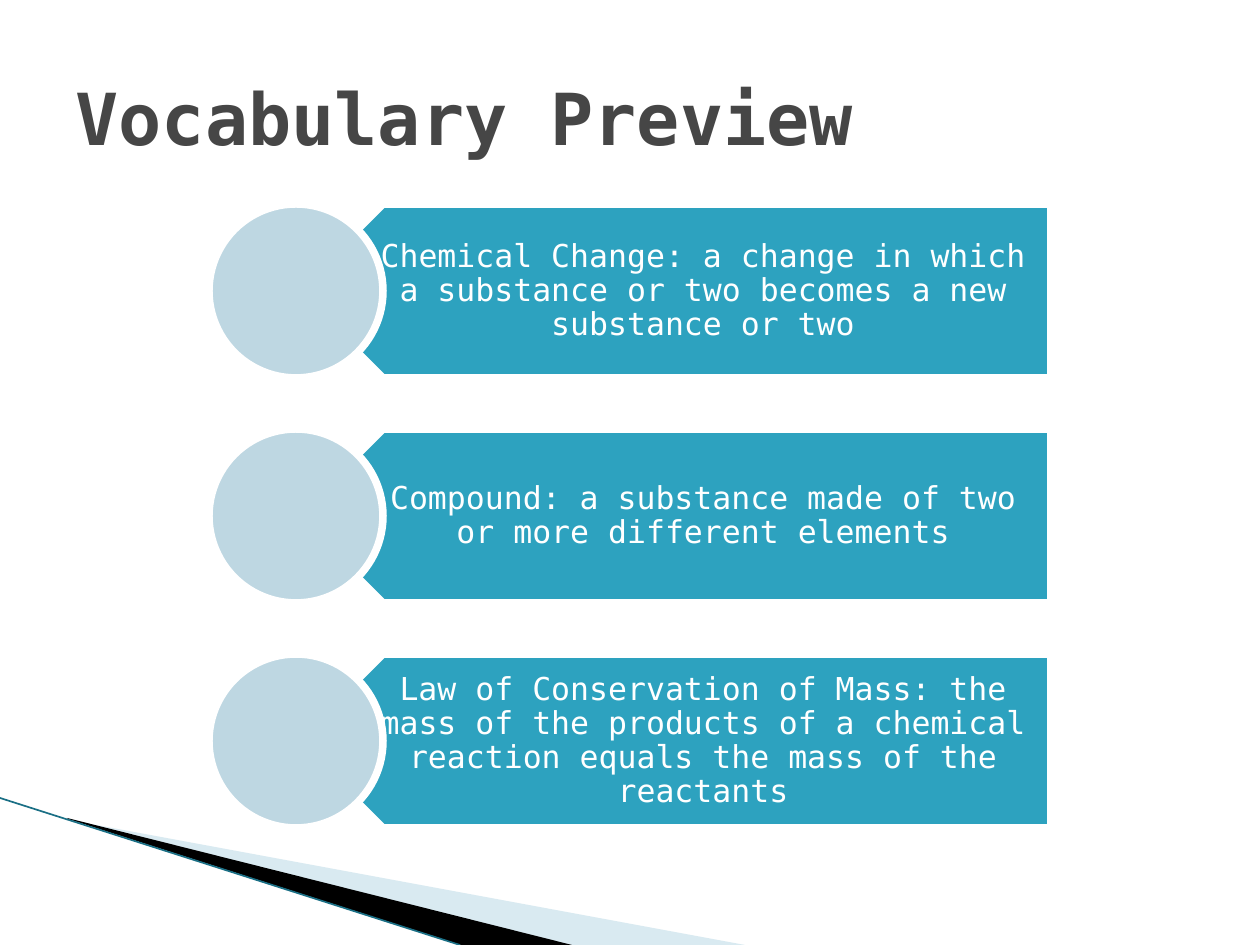
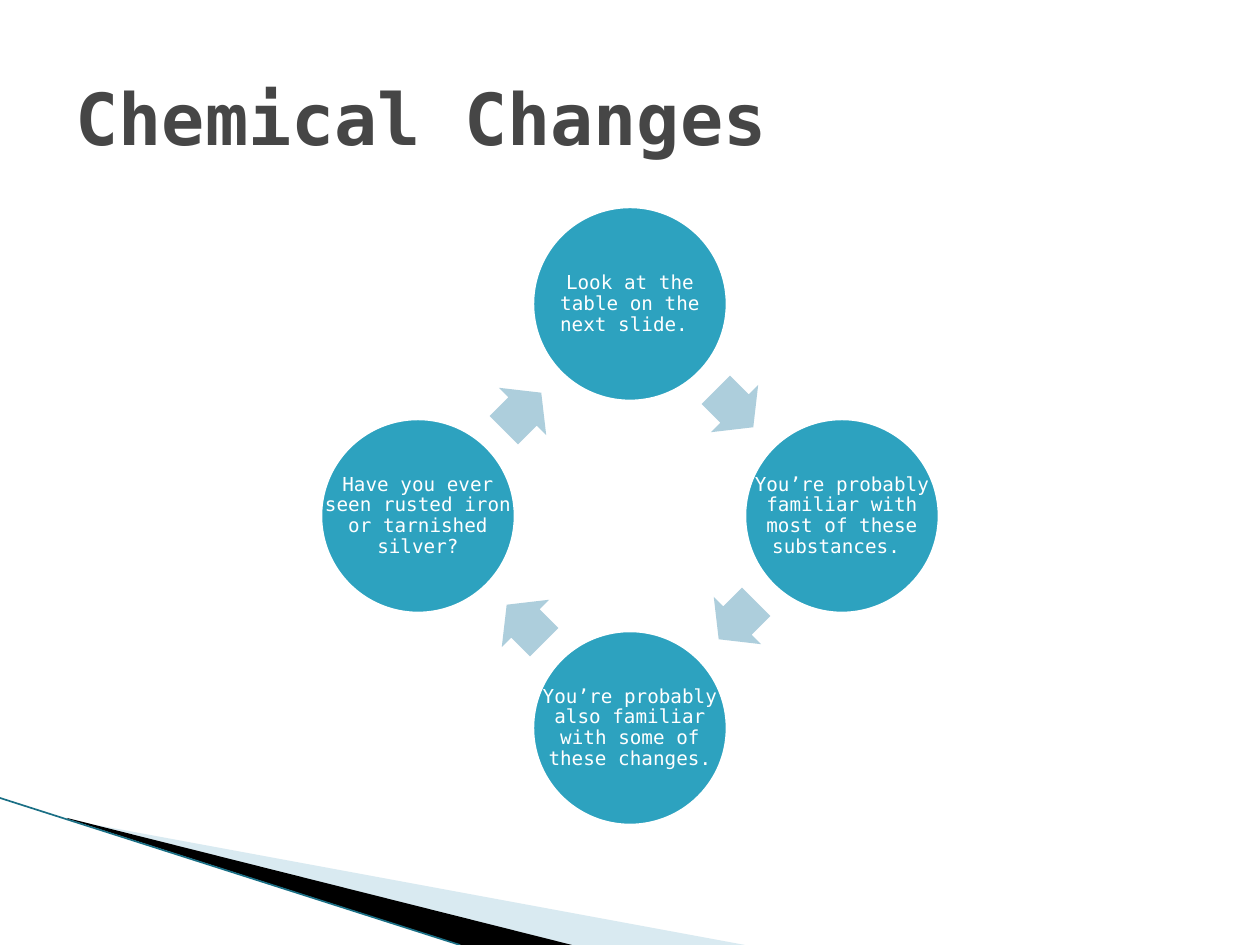
from math import cos, radians, sin

from lxml.etree import SubElement
from pptx import Presentation
from pptx.dml.color import RGBColor
from pptx.enum.shapes import MSO_CONNECTOR, MSO_SHAPE
from pptx.enum.text import MSO_ANCHOR, MSO_AUTO_SIZE, PP_ALIGN
from pptx.oxml.ns import qn
from pptx.util import Pt

VOCABULARY_TITLE = "Vocabulary Preview"
DEFINITIONS = [
    "Chemical Change: a change in which a substance or two becomes a new substance or two",
    "Compound: a substance made of two or more different elements",
    "Law of Conservation of Mass: the mass of the products of a chemical reaction "
    "equals the mass of the reactants",
]
CYCLE_TITLE = "Chemical Changes"
CYCLE_STEPS = [
    "Look at the table on the next slide. ",
    "You’re probably familiar with most of these substances. ",
    "You’re probably also familiar with some of these changes.",
    "Have you ever seen rusted iron or tarnished silver?",
]

FONT = "DejaVu Sans Mono"
COLORS = {
    "title": "464646",
    "accent": "2DA2BF",
    "disc": "BED7E2",
    "arrow": "ADCEDC",
    "white": "FFFFFF",
    "light_band": "A0CBDC",
    "dark_band": "000000",
    "band_edge": "1A6F85",
}
OUTLINE = 4.33

PX = 914400 / 126
SLIDE_SIZE = (1260, 945)
TITLE_BOX = (63, 38, 1134, 158)
BANDS = [  # colour, opacity in percent, corners
    ("light_band", 40, [(69, 820), (745, 945), (571, 945), (69, 819)]),
    ("dark_band", 100, [(67, 818), (572, 945), (461, 945), (68, 819)]),
]
BAND_EDGE = (0, 798, 460, 945)

PLATE_LEFT, PLATE_TOP, PLATE_WIDTH, PLATE_HEIGHT = 296, 204, 755, 174
PLATE_PITCH = 225
PLATE_INSETS = (77, 9, 18, 9)

CYCLE_CENTER = (630, 516)
CYCLE_RADIUS = 212
STEP_DIAMETER = 199
STEP_INSETS = (2, 2, 2, 2)
ARROW_SIZE = (53, 67)
ARROW_SETBACK = 2


def emu(*lengths):
    return [round(length * PX) for length in lengths]


def rgb(name):
    return RGBColor.from_string(COLORS[name])


def fill_shape(shape, color, outlined=False):
    shape.shadow.inherit = False
    shape.fill.solid()
    shape.fill.fore_color.rgb = rgb(color)
    if outlined:
        shape.line.color.rgb = rgb("white")
        shape.line.width = Pt(OUTLINE)
    else:
        shape.line.fill.background()


def add_filled(slide, kind, box, color, outlined=False):
    shape = slide.shapes.add_shape(kind, *emu(*box))
    fill_shape(shape, color, outlined)
    return shape


def write_text(frame, text, size, color, alignment, bold=False):
    frame.word_wrap = True
    frame.auto_size = MSO_AUTO_SIZE.NONE
    frame.vertical_anchor = MSO_ANCHOR.MIDDLE
    paragraph = frame.paragraphs[0]
    paragraph.alignment = alignment
    run = paragraph.add_run()
    run.text = text
    run.font.name = FONT
    run.font.size = Pt(size)
    run.font.bold = bold
    run.font.color.rgb = rgb(color)
    return paragraph


def add_label(slide, box, insets, text, size):
    """Lay white centred text over a shape, free of the shape's own text area."""
    frame = slide.shapes.add_textbox(*emu(*box)).text_frame
    (frame.margin_left, frame.margin_top,
     frame.margin_right, frame.margin_bottom) = emu(*insets)
    paragraph = write_text(frame, text, size, "white", PP_ALIGN.CENTER)
    paragraph.line_spacing = 0.9


def add_titled_slide(presentation, layout, title):
    slide = presentation.slides.add_slide(layout)
    write_text(slide.shapes.title.text_frame, title, 41, "title", PP_ALIGN.LEFT, bold=True)
    return slide


def move_bands_to_layout(slide, layout):
    """Draw the corner bands with the slide's tools, then hand them to the layout."""
    bands = []
    for color, opacity, corners in BANDS:
        builder = slide.shapes.build_freeform(*corners[0], scale=PX)
        builder.add_line_segments(corners[1:], close=True)
        band = builder.convert_to_shape()
        fill_shape(band, color)
        if opacity < 100:
            color_element = band.element.spPr.find(qn("a:solidFill"))[0]
            SubElement(color_element, qn("a:alpha"), val=str(opacity * 1000))
        bands.append(band)
    edge = slide.shapes.add_connector(MSO_CONNECTOR.STRAIGHT, *emu(*BAND_EDGE))
    edge.line.color.rgb = rgb("band_edge")
    edge.line.width = Pt(0.95)
    SubElement(edge.element.spPr, qn("a:effectLst"))
    for shape in [*bands, edge]:
        layout.shapes.element.append(shape.element)


def draw_definitions(slide):
    for index, definition in enumerate(DEFINITIONS):
        top = PLATE_TOP + index * PLATE_PITCH
        box = (PLATE_LEFT, top, PLATE_WIDTH, PLATE_HEIGHT)
        plate = add_filled(slide, MSO_SHAPE.PENTAGON, box, "accent", outlined=True)
        plate.rotation = 180
        add_label(slide, box, PLATE_INSETS, definition, 18)
        disc = (PLATE_LEFT - PLATE_HEIGHT / 2, top, PLATE_HEIGHT, PLATE_HEIGHT)
        add_filled(slide, MSO_SHAPE.OVAL, disc, "disc", outlined=True)


def centered_box(x, y, width, height):
    return (x - width / 2, y - height / 2, width, height)


def cycle_point(angle, radius):
    """Point on the cycle, with the angle in degrees clockwise from the top."""
    x, y = CYCLE_CENTER
    return x + radius * sin(radians(angle)), y - radius * cos(radians(angle))


def draw_cycle(slide):
    turn = 360 / len(CYCLE_STEPS)
    for index, step in enumerate(CYCLE_STEPS):
        angle = index * turn
        box = centered_box(*cycle_point(angle, CYCLE_RADIUS), STEP_DIAMETER, STEP_DIAMETER)
        add_filled(slide, MSO_SHAPE.OVAL, box, "accent", outlined=True)
        add_label(slide, box, STEP_INSETS, step, 11)

        heading = angle + turn / 2
        x, y = cycle_point(heading, CYCLE_RADIUS * cos(radians(turn / 2)))
        x -= ARROW_SETBACK * cos(radians(heading))
        y -= ARROW_SETBACK * sin(radians(heading))
        arrow = add_filled(slide, MSO_SHAPE.RIGHT_ARROW,
                           centered_box(x, y, *ARROW_SIZE), "arrow")
        arrow.rotation = heading
        arrow.adjustments[0] = 0.6
        arrow.adjustments[1] = 0.5


def main():
    presentation = Presentation()
    presentation.slide_width, presentation.slide_height = emu(*SLIDE_SIZE)
    layout = presentation.slide_layouts.get_by_name("Title Only")
    title = layout.placeholders[0]
    title.left, title.top, title.width, title.height = emu(*TITLE_BOX)

    vocabulary = add_titled_slide(presentation, layout, VOCABULARY_TITLE)
    move_bands_to_layout(vocabulary, layout)
    draw_definitions(vocabulary)
    draw_cycle(add_titled_slide(presentation, layout, CYCLE_TITLE))
    presentation.save("out.pptx")


if __name__ == "__main__":
    main()
